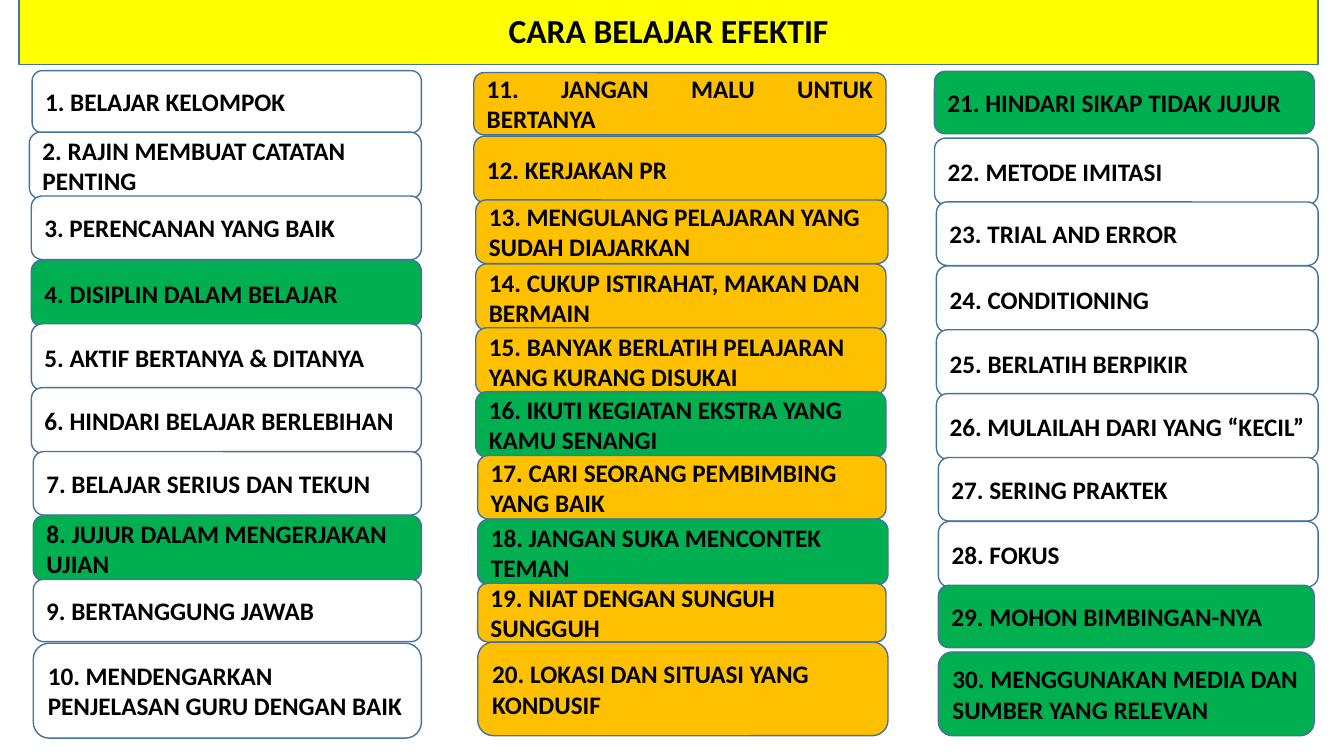
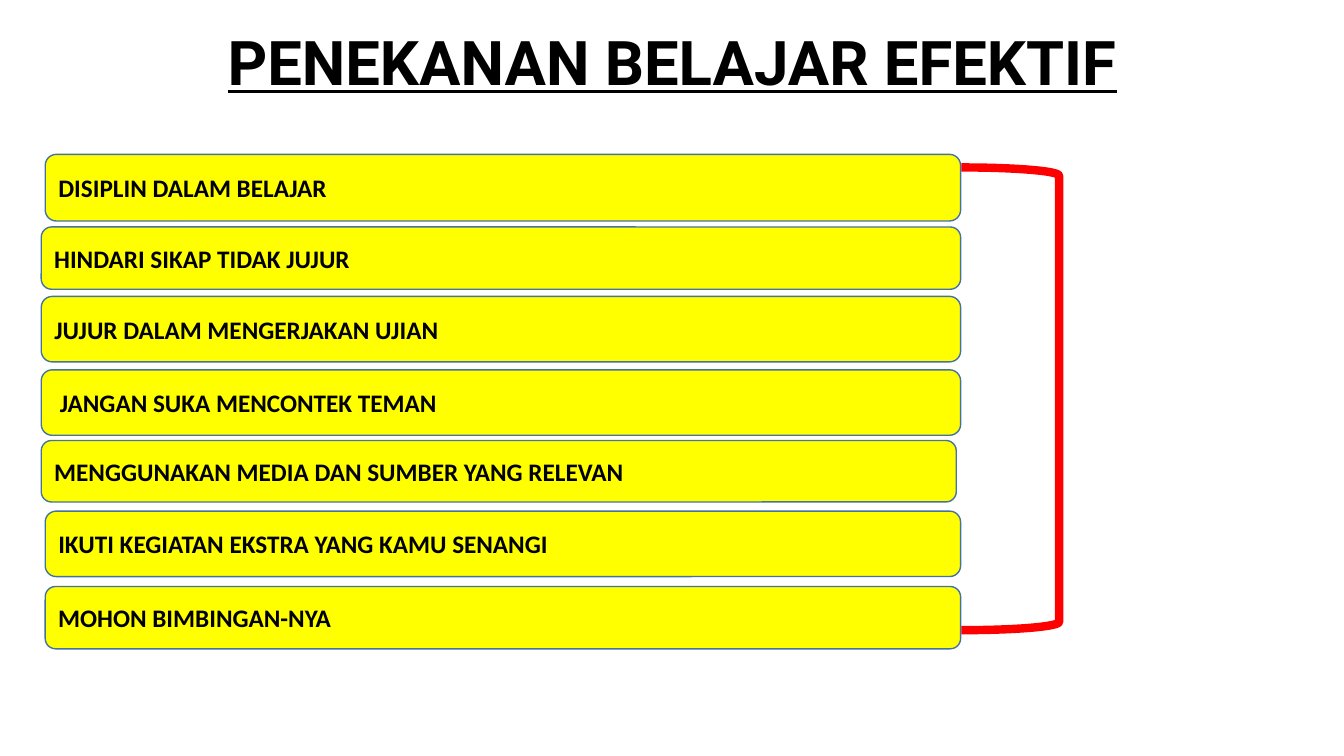
from lxml import etree
from pptx import Presentation
from pptx.dml.color import RGBColor
from pptx.enum.shapes import MSO_SHAPE
from pptx.enum.text import MSO_ANCHOR, MSO_AUTO_SIZE, PP_ALIGN
from pptx.oxml.ns import qn
from pptx.util import Cm, Pt

ROUNDED = MSO_SHAPE.ROUNDED_RECTANGLE
BRACKET = MSO_SHAPE.RIGHT_BRACKET
MIDDLE = MSO_ANCHOR.MIDDLE
NO_FIT = MSO_AUTO_SIZE.NONE
LEFT, CENTER, JUSTIFY = PP_ALIGN.LEFT, PP_ALIGN.CENTER, PP_ALIGN.JUSTIFY

COLORS = {
    "text": "000000", "outline": "43739E", "white": "FFFFFF",
    "yellow": "FFFF00", "green": "00B050", "orange": "FFC000", "red": "FF0000",
}
BODY_FONT, HEADING_FONT = "Calibri", "Roboto"
INSET = 0.25

METHODS_TITLE = "CARA BELAJAR EFEKTIF"
COLUMNS = [
    {"left": 0.74, "right": 10.62, "first": 1.78, "second": 3.33,
     "last": 16.21, "last_height": 2.39, "fill": "white",
     "items": [
         "BELAJAR KELOMPOK",
         "RAJIN MEMBUAT CATATAN PENTING",
         "PERENCANAN YANG BAIK",
         "DISIPLIN DALAM BELAJAR",
         "AKTIF BERTANYA & DITANYA",
         "HINDARI BELAJAR BERLEBIHAN",
         "BELAJAR SERIUS DAN TEKUN",
         "JUJUR DALAM MENGERJAKAN UJIAN",
         "BERTANGGUNG JAWAB",
         "MENDENGARKAN PENJELASAN GURU DENGAN BAIK"]},
    {"left": 11.94, "right": 22.33, "first": 1.83, "second": 3.43,
     "last": 16.18, "last_height": 2.36, "fill": "orange",
     "items": [
         "JANGAN MALU UNTUK BERTANYA",
         "KERJAKAN PR",
         "MENGULANG PELAJARAN YANG SUDAH DIAJARKAN",
         "CUKUP ISTIRAHAT, MAKAN DAN BERMAIN",
         "BANYAK BERLATIH PELAJARAN YANG KURANG DISUKAI",
         "IKUTI KEGIATAN EKSTRA YANG KAMU SENANGI",
         "CARI SEORANG PEMBIMBING YANG BAIK",
         "JANGAN SUKA MENCONTEK TEMAN",
         "NIAT DENGAN SUNGUH SUNGGUH",
         "LOKASI DAN SITUASI YANG KONDUSIF"]},
    {"left": 23.55, "right": 33.22, "first": 1.8, "second": 3.48,
     "last": 16.43, "last_height": 2.11, "fill": "white",
     "items": [
         "HINDARI SIKAP TIDAK JUJUR",
         "METODE IMITASI",
         "TRIAL AND ERROR",
         "CONDITIONING",
         "BERLATIH BERPIKIR",
         "MULAILAH DARI YANG “KECIL”",
         "SERING PRAKTEK",
         "FOKUS",
         "MOHON BIMBINGAN-NYA",
         "MENGGUNAKAN MEDIA DAN SUMBER YANG RELEVAN"]},
]
ROW_PITCH = 1.61
ROW_HEIGHTS = [1.57, 1.68, 1.6, 1.68, 1.68, 1.65, 1.6, 1.65, 1.57]
ROW_SHIFTS = [0] * 2 + [0.05] * 4 + [0.1] * 4
LEFT_SHIFTS = {1: 0.07}
RIGHT_SHIFTS = {13: 0.05, 18: 0.05, 20: 0.05, 21: -0.1, 29: -0.1, 30: -0.1}
GREEN_NUMBERS = {4, 8, 16, 18, 21, 29, 30}
JUSTIFIED_NUMBERS = {11}

EMPHASIS_TITLE = "PENEKANAN BELAJAR EFEKTIF"
EMPHASIS_BARS = [
    ("DISIPLIN DALAM BELAJAR", 1.14, 3.89, 24.21, 1.68, 0),
    ("HINDARI SIKAP TIDAK JUJUR", 1.04, 5.72, 24.21, 1.57, 0),
    ("JUJUR DALAM MENGERJAKAN UJIAN", 1.04, 7.47, 24.21, 1.65, 0),
    ("JANGAN SUKA MENCONTEK TEMAN", 1.04, 9.32, 24.21, 1.65, 0.14),
    ("MENGGUNAKAN MEDIA DAN SUMBER YANG RELEVAN", 1.04, 11.1, 24.1, 1.55, 0),
    ("IKUTI KEGIATAN EKSTRA YANG KAMU SENANGI", 1.14, 12.88, 24.21, 1.65, 0),
    ("MOHON BIMBINGAN-NYA", 1.14, 14.78, 24.21, 1.57, 0),
]


def color(name):
    return RGBColor.from_string(COLORS[name])


def paint(shape, fill):
    shape.fill.solid()
    shape.fill.fore_color.rgb = color(fill)
    shape.line.color.rgb = color("outline")
    shape.line.width = Pt(1)


def write(shape, text, size, font=BODY_FONT, align=LEFT):
    frame = shape.text_frame
    frame.word_wrap = True
    frame.auto_size = NO_FIT
    frame.vertical_anchor = MIDDLE
    para = frame.paragraphs[0]
    para.alignment = align
    span = para.add_run()
    span.text = text
    span.font.name = font
    span.font.size = Pt(size)
    span.font.bold = True
    span.font.color.rgb = color("text")
    return para, span


def add_title(page, text, box, size, font):
    title = page.shapes.title
    title.left, title.top, title.width, title.height = map(Cm, box)
    para, span = write(title, text, size, font, CENTER)
    return title, para, span


def add_bar(page, text, left, top, right, height, fill, align=LEFT, indent=0):
    bar = page.shapes.add_shape(
        ROUNDED, Cm(left), Cm(top), Cm(right - left), Cm(height))
    bar.shadow.inherit = False
    paint(bar, fill)
    write(bar, text, 18, align=align)
    bar.text_frame.margin_left = Cm(INSET + indent)


def round_corners(shape):
    outline = etree.Element(qn("a:prstGeom"), prst="roundRect")
    etree.SubElement(outline, qn("a:avLst"))
    shape.element.spPr.find(qn("a:xfrm")).addnext(outline)


def add_column(page, column, start):
    for row, text in enumerate(column["items"]):
        number = start + row
        if row == len(column["items"]) - 1:
            top, height = column["last"], column["last_height"]
        else:
            top = column["second"] + (row - 1) * ROW_PITCH if row else column["first"]
            height = min(ROW_HEIGHTS[row], column["last"] - top)
        add_bar(
            page, f"{number}. {text}",
            column["left"] + ROW_SHIFTS[row] + LEFT_SHIFTS.get(number, 0), top,
            column["right"] + RIGHT_SHIFTS.get(number, 0), height,
            "green" if number in GREEN_NUMBERS else column["fill"],
            JUSTIFY if number in JUSTIFIED_NUMBERS else LEFT)


def build_methods(deck, layout):
    page = deck.slides.add_slide(layout)
    banner, _, _ = add_title(
        page, METHODS_TITLE, (0.48, -0.1, 32.74, 1.73), 24, BODY_FONT)
    round_corners(banner)
    paint(banner, "yellow")
    start = 1
    for column in COLUMNS:
        add_column(page, column, start)
        start += len(column["items"])


def build_emphasis(deck, layout):
    page = deck.slides.add_slide(layout)
    _, para, span = add_title(
        page, EMPHASIS_TITLE, (2.34, 0.51, 29.21, 2.29), 44, HEADING_FONT)
    para.line_spacing = 0.9
    span.font.underline = True
    for text, left, top, right, height, indent in EMPHASIS_BARS:
        add_bar(page, text, left, top, right, height, "yellow", indent=indent)
    bracket = page.shapes.add_shape(
        BRACKET, Cm(24.23), Cm(4.22), Cm(2.46), Cm(11.66))
    bracket.shadow.inherit = False
    bracket.fill.background()
    bracket.line.color.rgb = color("red")
    bracket.line.width = Pt(6)


def main():
    deck = Presentation()
    deck.slide_width, deck.slide_height = Cm(33.87), Cm(19.05)
    layout = deck.slide_layouts[5]
    build_methods(deck, layout)
    build_emphasis(deck, layout)
    deck.save("out.pptx")


if __name__ == "__main__":
    main()
